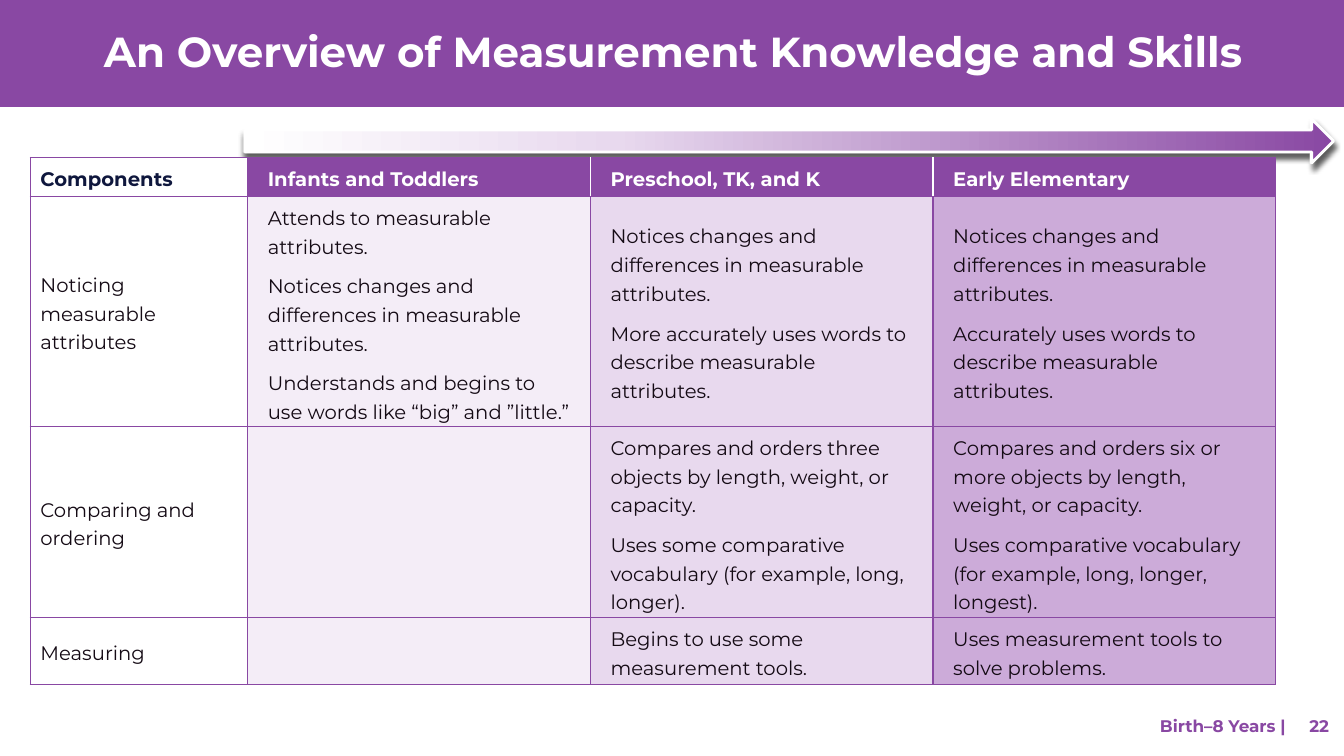
"""Build the slide on measurement knowledge and skills from birth to eight years."""
import dataclasses
import pptx
import pptx.util
import pptx.dml.color
import pptx.enum.dml
import pptx.enum.shapes
import pptx.enum.text
import pptx.oxml
import pptx.oxml.ns

Pt = pptx.util.Pt
Align = pptx.enum.text.PP_ALIGN
Anchor = pptx.enum.text.MSO_ANCHOR
Shape = pptx.enum.shapes.MSO_SHAPE
NAMESPACE = pptx.oxml.ns.nsdecls("a")


@dataclasses.dataclass(frozen=True)
class Theme:
    font: str = "Montserrat"
    purple: str = "8948A3"
    pale: str = "F4EDF7"
    light: str = "E8D9EE"
    medium: str = "CCABD9"
    white: str = "FFFFFF"
    navy: str = "0F173D"
    ink: str = "140A14"
    title_size: int = 30
    table_size: int = 14
    footer_size: int = 12


theme = Theme()


def rgb(value):
    return pptx.dml.color.RGBColor.from_string(value)


def style(paragraph, size, color, bold, spacing=1.0):
    paragraph.line_spacing = spacing
    paragraph.font.name = theme.font
    paragraph.font.size = Pt(size)
    paragraph.font.bold = bold
    paragraph.font.color.rgb = rgb(color)


deck = pptx.Presentation()
deck.slide_width, deck.slide_height = Pt(960), Pt(540)
slide = deck.slides.add_slide(deck.slide_layouts[5])

banner = slide.shapes.add_shape(Shape.RECTANGLE, Pt(0), Pt(0), Pt(960), Pt(76.4))
banner.shadow.inherit = False
banner.fill.solid()
banner.fill.fore_color.rgb = rgb(theme.purple)
banner.line.fill.background()

title = slide.shapes.title
banner.element.addnext(title.element)
title.left, title.top, title.width, title.height = Pt(67), Pt(18.7), Pt(853), Pt(40.3)
title.text_frame.text = "An Overview of Measurement Knowledge and Skills"
title.text_frame.auto_size = pptx.enum.text.MSO_AUTO_SIZE.NONE
title.text_frame.vertical_anchor = Anchor.MIDDLE
heading = title.text_frame.paragraphs[0]
heading.alignment = Align.LEFT
style(heading, theme.title_size, theme.white, True, 0.9)

footer = slide.shapes.add_textbox(Pt(683.3), Pt(504), Pt(274.3), Pt(28.8)).text_frame
footer.word_wrap = True
footer.vertical_anchor = Anchor.MIDDLE
footer.text = "\tBirth–8 Years |\t22"
page_label = footer.paragraphs[0]
page_label.alignment = Align.LEFT
page_label._p.get_or_add_pPr().append(pptx.oxml.parse_xml(
    f'<a:tabLst {NAMESPACE}><a:tab pos="{Pt(228)}" algn="r"/>'
    f'<a:tab pos="{Pt(259)}" algn="r"/></a:tabLst>'))
style(page_label, theme.footer_size, theme.purple, True)

white_stops = [(0, theme.white), (100, theme.white)]
purple_stops = [(0, theme.white), (34, theme.light), (100, theme.purple)]
for left, stops in ((174.4, white_stops), (175, purple_stops)):
    arrow = slide.shapes.add_shape(Shape.RIGHT_ARROW, Pt(left), Pt(85), Pt(777.6), Pt(31.4))
    arrow.line.color.rgb = rgb(theme.white)
    arrow.line.width = Pt(2)
    arrow.shadow.inherit = False
    gradient = "".join(f'<a:gs pos="{at * 1000}"><a:srgbClr val="{color}"/></a:gs>'
                       for at, color in stops)
    properties = arrow.element.spPr
    properties.find(pptx.oxml.ns.qn("a:prstGeom")).addnext(pptx.oxml.parse_xml(
        f'<a:gradFill {NAMESPACE} rotWithShape="1"><a:gsLst>{gradient}</a:gsLst>'
        '<a:lin ang="0" scaled="0"/></a:gradFill>'))
    properties.find(pptx.oxml.ns.qn("a:effectLst")).append(pptx.oxml.parse_xml(
        f'<a:outerShdw {NAMESPACE} blurRad="{Pt(4)}" dist="{Pt(3)}" dir="5400000" '
        'rotWithShape="0"><a:srgbClr val="000000"><a:alpha val="40000"/></a:srgbClr>'
        '</a:outerShdw>'))

noticing = "Notices changes and differences in measurable attributes."
rows = [
    (28, ["Components", "Infants and Toddlers", "Preschool, TK, and K", "Early Elementary"]),
    (164, [
        "Noticing measurable attributes",
        "Attends to measurable attributes.\n" + noticing
        + "\nUnderstands and begins to use words like “big” and ”little.”",
        noticing + "\nMore accurately uses words to describe measurable attributes.",
        noticing + "\nAccurately uses words to describe measurable attributes."]),
    (136.4, [
        "Comparing and ordering",
        "",
        "Compares and orders three objects by length, weight, or capacity.\n"
        "Uses some comparative vocabulary (for example, long, longer).",
        "Compares and orders six or more objects by length, weight, or capacity.\n"
        "Uses comparative vocabulary (for example, long, longer, longest)."]),
    (47, [
        "Measuring",
        "",
        "Begins to use some measurement tools.",
        "Uses measurement tools to solve problems."]),
]
column_widths = [155.3, 244.8, 244.8, 244.8]
column_fills = [theme.white, theme.pale, theme.light, theme.medium]
skills = slide.shapes.add_table(len(rows), len(column_widths), Pt(21.6), Pt(112.5),
                                Pt(sum(column_widths)),
                                Pt(sum(height for height, _ in rows))).table
skills.horz_banding = False
for column, width in zip(skills.columns, column_widths):
    column.width = Pt(width)

for row, (height, texts) in enumerate(rows):
    skills.rows[row].height = Pt(height)
    for column, text in enumerate(texts):
        cell = skills.cell(row, column)
        header = row == 0
        stage_header = header and column > 0
        cell.fill.solid()
        cell.fill.fore_color.rgb = rgb(theme.purple if stage_header else column_fills[column])
        cell.vertical_anchor = Anchor.MIDDLE
        cell.margin_left = cell.margin_right = Pt(14.4 if column else 7.2)
        cell.margin_top = cell.margin_bottom = Pt(3.6)
        cell.text = text
        color = theme.white if stage_header else theme.navy if header else theme.ink
        for index, paragraph in enumerate(cell.text_frame.paragraphs):
            if index:
                paragraph.space_before = Pt(8)
            style(paragraph, theme.table_size, color, header, 1.2)
        edges = dict.fromkeys(("lnL", "lnR", "lnT", "lnB"), theme.purple)
        if header and column > 1:
            edges["lnL"] = theme.white
        if header and column in (1, 2):
            edges["lnR"] = theme.white
        for position, (edge, edge_color) in enumerate(edges.items()):
            cell._tc.get_or_add_tcPr().insert(position, pptx.oxml.parse_xml(
                f'<a:{edge} {NAMESPACE} w="{Pt(1)}"><a:solidFill>'
                f'<a:srgbClr val="{edge_color}"/></a:solidFill></a:{edge}>'))

deck.save("out.pptx")
